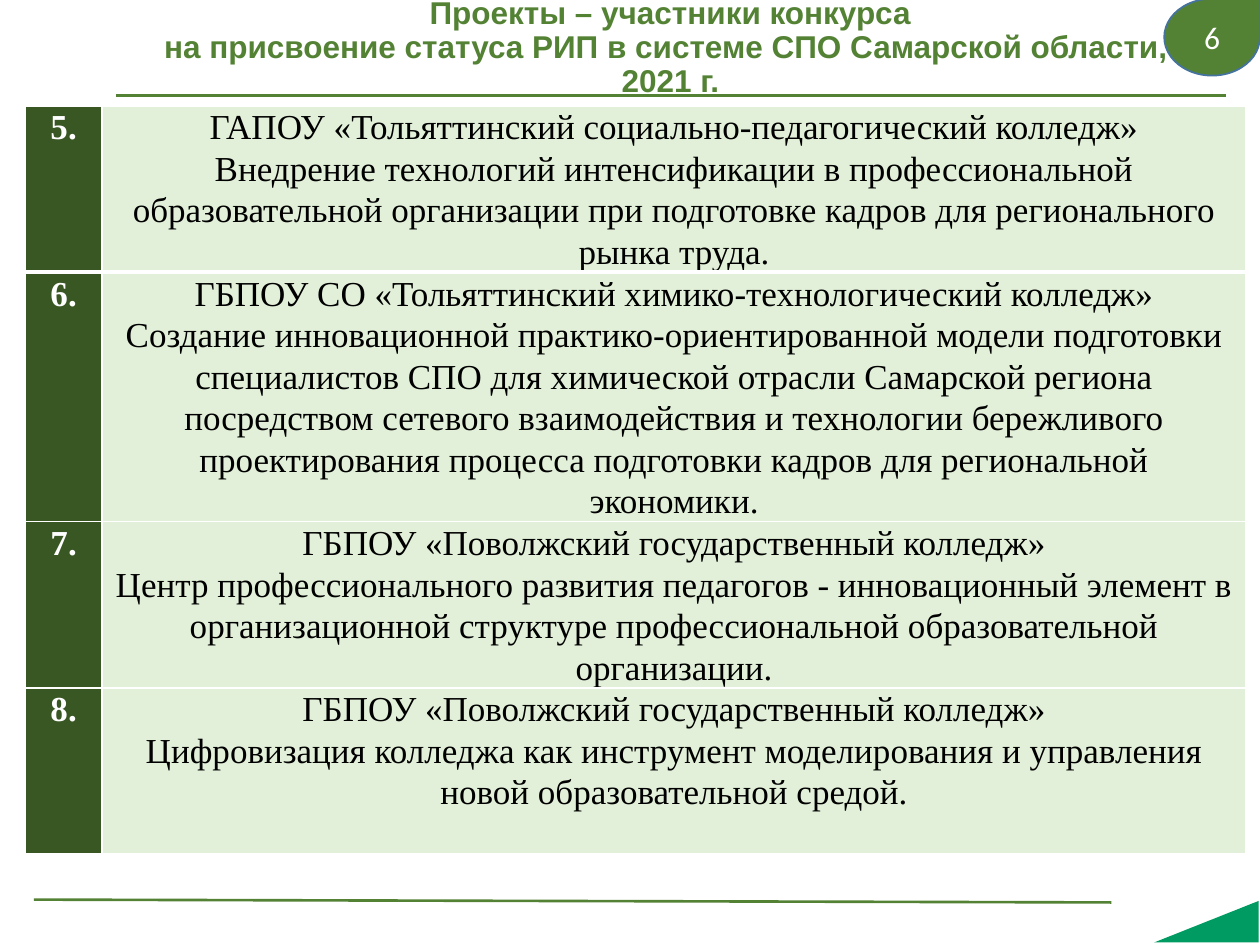
from typing import NamedTuple

from pptx import Presentation
from pptx.dml.color import RGBColor
from pptx.enum.shapes import MSO_CONNECTOR as Link, MSO_SHAPE as Kind
from pptx.enum.text import MSO_ANCHOR as Anchor, PP_ALIGN as Align
from pptx.oxml.ns import qn
from pptx.util import Inches, Pt
from lxml.etree import SubElement

GREEN = RGBColor(0x54, 0x82, 0x35)
DARK = RGBColor(0x38, 0x57, 0x23)
PALE = RGBColor(0xE2, 0xF0, 0xD9)
TEAL = RGBColor(0x00, 0x9B, 0x62)
BLUE = RGBColor(0x43, 0x73, 0x9E)
WHITE = RGBColor(0xFF, 0xFF, 0xFF)
BLACK = RGBColor(0x00, 0x00, 0x00)

WIDE, HIGH = 10, 7.5
LINE = 0.33  # height of one line of table text
COLS = (0.61, 9.08)


class Box(NamedTuple):
    """Place and size in inches."""
    left: float
    top: float
    width: float
    height: float

    def emu(self) -> list:
        return [Inches(v) for v in self]


class Entry(NamedTuple):
    """One project of the contest; lines sets the row height."""
    school: str
    topic: str
    lines: int


class Rule(NamedTuple):
    """A line whose ends are shares of the slide's size."""
    x1: float
    y1: float
    x2: float
    y2: float


FIRST = 5
ENTRIES = (
    Entry("ГАПОУ «Тольяттинский социально-педагогический колледж»",
          "Внедрение технологий интенсификации в профессиональной образовательной "
          "организации при подготовке кадров для регионального рынка труда.", 4),
    Entry("ГБПОУ СО «Тольяттинский химико-технологический колледж»",
          "Создание инновационной практико-ориентированной модели подготовки "
          "специалистов СПО для химической отрасли Самарской региона посредством "
          "сетевого взаимодействия и технологии бережливого проектирования "
          "процесса подготовки кадров для региональной экономики.", 6),
    Entry("ГБПОУ «Поволжский государственный колледж»",
          "Центр профессионального развития педагогов - инновационный элемент в "
          "организационной структуре профессиональной образовательной организации.", 4),
    Entry("ГБПОУ «Поволжский государственный колледж»",
          "Цифровизация колледжа как инструмент моделирования и управления "
          "новой образовательной средой.", 4),
)
RULES = (Rule(0.092, 0.101, 0.973, 0.101), Rule(0.027, 0.952, 0.882, 0.955))
TITLE = ("Проекты – участники конкурса\v"
         "на присвоение статуса РИП в системе СПО Самарской области, \v2021 г.")


def style(frame, ink: RGBColor, space: float = 1, **form) -> None:
    """Centre every paragraph and apply the font values."""
    for para in frame.paragraphs:
        para.alignment, para.line_spacing = Align.CENTER, space
        para.space_before = para.space_after = Pt(0)
        for run in para.runs:
            for name, value in form.items():
                setattr(run.font, name, value)
            run.font.color.rgb = ink


def draw_rule(slide, rule: Rule) -> None:
    line = slide.shapes.add_connector(
        Link.STRAIGHT, Inches(rule.x1 * WIDE), Inches(rule.y1 * HIGH),
        Inches(rule.x2 * WIDE), Inches(rule.y2 * HIGH))
    line.line.color.rgb, line.line.width = GREEN, Pt(1.5)
    SubElement(line._element.spPr, qn("a:effectLst"))


def draw_shape(slide, kind: Kind, box: Box, fill: RGBColor):
    shape = slide.shapes.add_shape(kind, *box.emu())
    shape.shadow.inherit = False
    shape.fill.solid()
    shape.fill.fore_color.rgb = fill
    shape.line.fill.background()
    return shape


def edge(cell, side: str, width: float) -> None:
    line = SubElement(cell._tc.get_or_add_tcPr(), qn(f"a:ln{side}"), w=str(Pt(width)))
    fill = SubElement(line, qn("a:solidFill"))
    SubElement(fill, qn("a:srgbClr"), val=str(WHITE))


def draw_cell(cell, text: str, fill: RGBColor, ink: RGBColor, bold: bool, row: int) -> None:
    form = {"margin_left": Inches(0.07), "margin_right": Inches(0.07),
            "margin_top": 0, "margin_bottom": 0, "text": text}
    for name, value in form.items():
        setattr(cell, name, value)
    style(cell.text_frame, ink, 1.07, size=Pt(20), name="Times New Roman", bold=bold)
    # A thick edge parts the first row from the rest
    for side in "LRTB":
        edge(cell, side, 3 if (side, row) in (("B", 0), ("T", 1)) else 1)
    cell.fill.solid()
    cell.fill.fore_color.rgb = fill


def draw_table(slide) -> None:
    box = Box(0.2, 0.84, sum(COLS), LINE * sum(e.lines for e in ENTRIES))
    table = slide.shapes.add_table(len(ENTRIES), len(COLS), *box.emu()).table
    for col, width in zip(table.columns, COLS):
        col.width = Inches(width)
    for i, entry in enumerate(ENTRIES):
        table.rows[i].height = Inches(LINE * entry.lines)
        draw_cell(table.cell(i, 0), f"{FIRST + i}.", DARK, WHITE, True, i)
        draw_cell(table.cell(i, 1), f"{entry.school}\n{entry.topic}", PALE, BLACK, False, i)


def draw_title(slide) -> None:
    title = slide.shapes.title
    title.left, title.top, title.width, title.height = Box(0.8, 0.05, 9.04, 0.67).emu()
    frame = title.text_frame
    form = {"margin_left": Inches(0.09), "margin_right": Inches(0.09),
            "margin_top": Inches(0.04), "margin_bottom": Inches(0.04),
            "vertical_anchor": Anchor.MIDDLE, "word_wrap": True, "text": TITLE}
    for name, value in form.items():
        setattr(frame, name, value)
    style(frame, GREEN, 0.9, size=Pt(18), name="Arial", bold=True)


def main() -> None:
    deck = Presentation()
    deck.slide_width, deck.slide_height = Inches(WIDE), Inches(HIGH)
    slide = deck.slides.add_slide(deck.slide_layouts[5])

    # Rules and corner
    for rule in RULES:
        draw_rule(slide, rule)
    corner = draw_shape(slide, Kind.RIGHT_TRIANGLE, Box(9.41, 6.9, 0.33, 0.83), TEAL)
    corner.rotation = 270

    # Projects and heading
    draw_table(slide)
    draw_title(slide)

    # Page number
    drop = draw_shape(slide, Kind.TEAR, Box(9.24, -0.01, 0.76, 0.61), GREEN)
    drop.line.color.rgb, drop.line.width = BLUE, Pt(1)
    drop.text_frame.text = "6"
    drop.text_frame.vertical_anchor = Anchor.MIDDLE
    style(drop.text_frame, WHITE, size=Pt(18), name="Calibri")

    deck.save("out.pptx")


if __name__ == "__main__":
    main()
